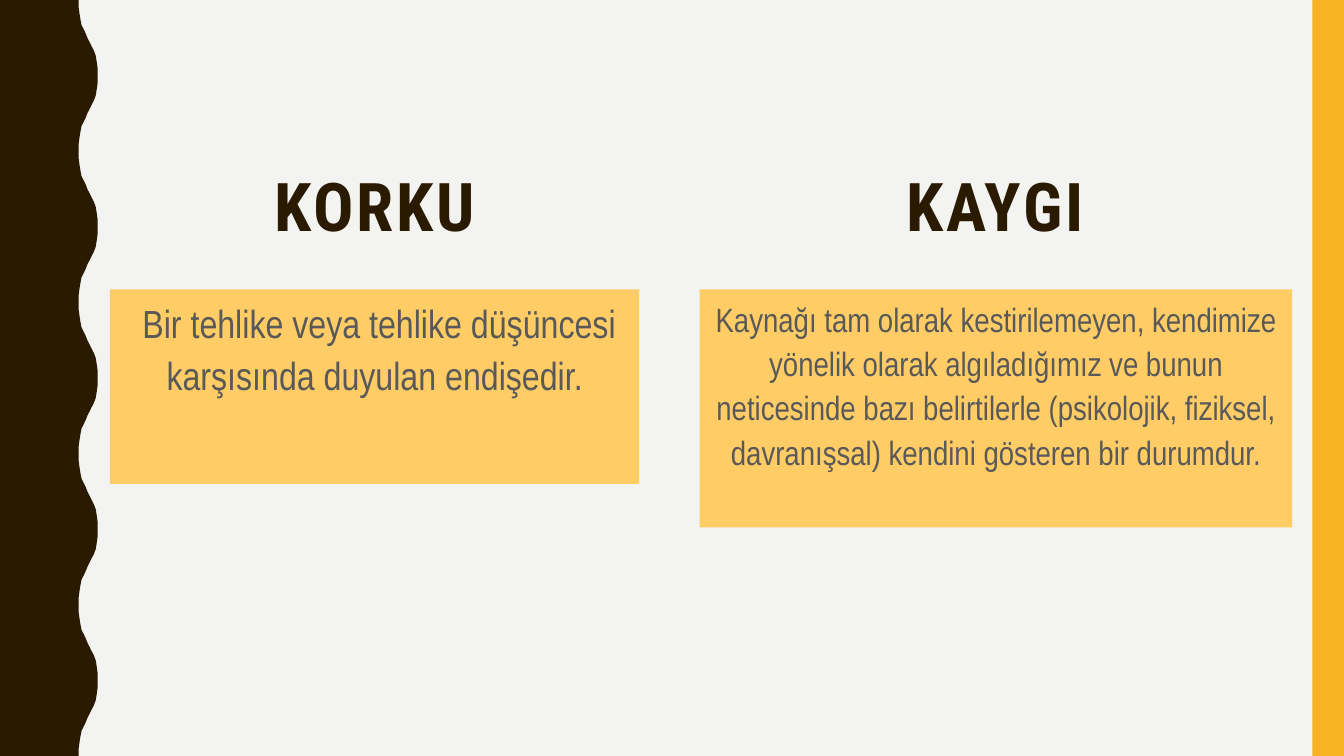
from dataclasses import dataclass
from typing import Any

from lxml.etree import SubElement
from pptx import Presentation
from pptx.dml.color import RGBColor
from pptx.enum.shapes import MSO_SHAPE
from pptx.enum.text import MSO_ANCHOR, MSO_AUTO_SIZE, PP_ALIGN
from pptx.oxml.ns import qn
from pptx.shapes.base import BaseShape
from pptx.slide import Slide
from pptx.util import Pt

COLORS = {
    "background": "F3F3F2",
    "dark": "2A1A00",
    "stripe": "F8B323",
    "panel": "FFCC66",
    "text": "595959",
}
SLIDE_WIDTH, SLIDE_HEIGHT = 960, 540
STRIPE_WIDTH = 22.5
WAVE_PERIOD = 108
WAVE_RISE = [
    (56.2, 0), (56.2, 5), (56.9, 10.1), (57.6, 14.4), (58.3, 18),
    (59.8, 20.9), (61.2, 23.8), (62.6, 27.4), (64.1, 30.2), (65.5, 33.1),
    (67, 36), (68.4, 39.6), (69.1, 43.9), (69.8, 49), (69.8, 54),
]


@dataclass(frozen=True)
class TextStyle:
    font: dict[str, Any]
    color: str
    anchor: MSO_ANCHOR
    line_spacing: float
    tracking: int = 0
    fill: str | None = None


@dataclass(frozen=True)
class TextBlock:
    placeholder: int
    left: float
    top: float
    width: float
    height: float
    text: str
    style: TextStyle


HEADING = TextStyle(
    {"name": "Roboto Condensed", "size": Pt(48), "bold": True},
    "dark", MSO_ANCHOR.BOTTOM, 1.0, tracking=200,
)
FEAR_BODY = TextStyle(
    {"name": "Arial Narrow", "size": Pt(28), "bold": False},
    "text", MSO_ANCHOR.TOP, 1.1, fill="panel",
)
ANXIETY_BODY = TextStyle(
    {"name": "Arial Narrow", "size": Pt(24), "bold": False},
    "text", MSO_ANCHOR.TOP, 1.1, fill="panel",
)
BLOCKS = [
    TextBlock(1, 78.5, 129, 378, 49.7, "KORKU", HEADING),
    TextBlock(
        2, 78.5, 206.7, 378, 139,
        " Bir tehlike veya tehlike düşüncesi karşısında duyulan endişedir.",
        FEAR_BODY,
    ),
    TextBlock(3, 522, 129, 378, 49.7, "KAYGI", HEADING),
    TextBlock(
        4, 499.7, 206.7, 423.3, 170,
        "Kaynağı tam olarak kestirilemeyen, kendimize yönelik olarak "
        "algıladığımız ve bunun neticesinde bazı belirtilerle (psikolojik, "
        "fiziksel, davranışsal) kendini gösteren bir durumdur.",
        ANXIETY_BODY,
    ),
]


def apply_format(target: Any, values: dict[str, Any]) -> None:
    for name, value in values.items():
        setattr(target, name, value)


def color_of(name: str) -> RGBColor:
    return RGBColor.from_string(COLORS[name])


def paint(shape: BaseShape, color: str) -> None:
    shape.fill.solid()
    shape.fill.fore_color.rgb = color_of(color)
    shape.line.fill.background()


def draw_wave(slide: Slide) -> None:
    period = WAVE_RISE + [(x, WAVE_PERIOD - y) for x, y in WAVE_RISE[-2::-1]]
    edge = [
        (x, y + start)
        for start in range(0, SLIDE_HEIGHT, WAVE_PERIOD)
        for x, y in period
    ]
    outline = [(Pt(x), Pt(y)) for x, y in edge + [(0, SLIDE_HEIGHT)]]
    builder = slide.shapes.build_freeform(0, 0)
    builder.add_line_segments(outline, close=True)
    wave = builder.convert_to_shape()
    wave.shadow.inherit = False
    paint(wave, "dark")


def draw_stripe(slide: Slide) -> None:
    stripe = slide.shapes.add_shape(
        MSO_SHAPE.RECTANGLE, Pt(SLIDE_WIDTH - STRIPE_WIDTH), 0,
        Pt(STRIPE_WIDTH), Pt(SLIDE_HEIGHT),
    )
    stripe.shadow.inherit = False
    paint(stripe, "stripe")


def write_block(slide: Slide, block: TextBlock) -> None:
    style = block.style
    shape = slide.placeholders[block.placeholder]
    apply_format(shape, {
        "left": Pt(block.left), "top": Pt(block.top),
        "width": Pt(block.width), "height": Pt(block.height),
    })
    if style.fill:
        paint(shape, style.fill)
    apply_format(shape.text_frame, {
        "word_wrap": True,
        "auto_size": MSO_AUTO_SIZE.NONE,
        "vertical_anchor": style.anchor,
        "margin_left": Pt(7.2), "margin_right": Pt(7.2),
        "margin_top": Pt(3.6), "margin_bottom": Pt(3.6),
    })
    paragraph = shape.text_frame.paragraphs[0]
    apply_format(paragraph, {
        "alignment": PP_ALIGN.CENTER,
        "line_spacing": style.line_spacing,
        "space_before": Pt(7),
    })
    properties = paragraph._p.get_or_add_pPr()
    properties.set("marL", "0")
    properties.set("indent", "0")
    SubElement(properties, qn("a:buNone"))
    run = paragraph.add_run()
    run.text = block.text
    apply_format(run.font, style.font)
    run.font.color.rgb = color_of(style.color)
    run._r.get_or_add_rPr().set("spc", str(style.tracking))


def main() -> None:
    presentation = Presentation()
    apply_format(presentation, {
        "slide_width": Pt(SLIDE_WIDTH), "slide_height": Pt(SLIDE_HEIGHT),
    })
    slide = presentation.slides.add_slide(
        presentation.slide_layouts.get_by_name("Comparison")
    )
    slide.background.fill.solid()
    slide.background.fill.fore_color.rgb = color_of("background")
    title = slide.shapes.title.element
    title.getparent().remove(title)
    draw_wave(slide)
    draw_stripe(slide)
    for block in BLOCKS:
        write_block(slide, block)
    presentation.save("out.pptx")


if __name__ == "__main__":
    main()
